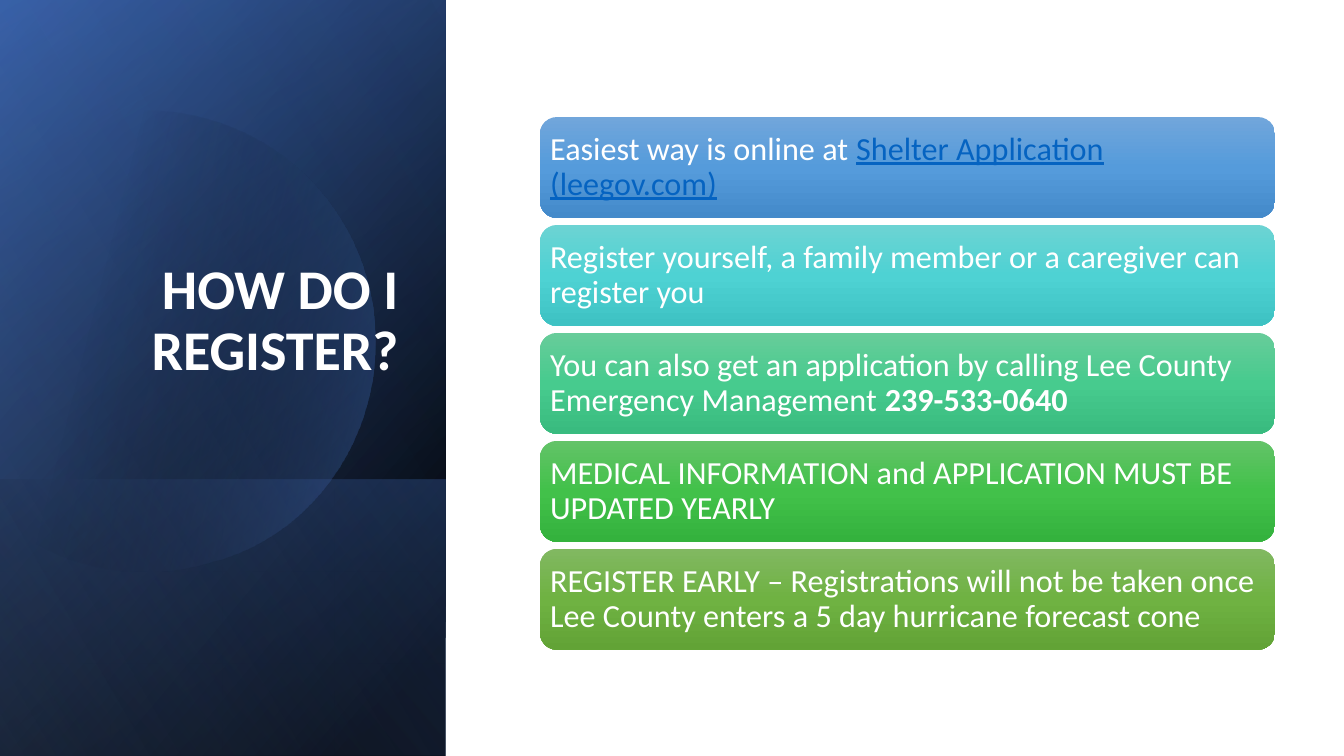
from lxml.etree import SubElement
from pptx import Presentation
from pptx.dml.color import RGBColor
from pptx.enum.shapes import MSO_SHAPE
from pptx.enum.text import MSO_ANCHOR, PP_ALIGN
from pptx.oxml.ns import qn
from pptx.util import Cm, Pt

SLIDE_W, SLIDE_H = 33.87, 19.05
PANEL_W = 11.23
BAR_LEFT, BAR_TOP, BAR_W, BAR_H, BAR_PITCH = 13.61, 2.95, 18.52, 2.54, 2.72
CURVE_STEPS = 24

COLORS = {
    "white": "FFFFFF", "black": "000000", "navy": "2F5597",
    "blue": "4472C4", "pale": "8FAADC", "link": "0563C1",
}

PANELS = [
    (SLIDE_H, [(8, "black", 100), (100, "navy", 100)], 50),
    (SLIDE_H, [(0, "black", 0), (99, "blue", 46)], 30),
    (6.96, [(2, "blue", 29), (100, "black", 30)], 130),
]
SHEEN = (SLIDE_H, [(0, "black", 0), (99, "pale", 11)], 120)

DISC_START = (3.78, 2.79)
DISC_RIGHT = [
    ((6.25, 2.84), (8.51, 4.5), (9.22, 6.99)),
    ((10.11, 10.08), (8.33, 13.41), (5.26, 14.17)),
    ((3.33, 14.73), (1.35, 14.25), (0, 13.06)),
]
DISC_EDGE = (0, 4.09)
DISC_LEFT = [
    ((0.58, 3.58), (1.27, 3.23), (2.03, 3.02)),
    ((2.62, 2.87), (3.2, 2.79), DISC_START),
]

LINK = {"color": "link", "underline": True}
BOLD = {"bold": True}
STEPS = [
    (("71A6DB", "559BDB", "448ACA"),
     [("Easiest way is online at ", {}),
      ("Shelter Application (leegov.com)", LINK)]),
    (("6CD3D3", "4ED2D3", "3EC2C3"),
     [("Register yourself, a family member or a caregiver can register you", {})]),
    (("67CC9A", "47CB8E", "39BB7F"),
     [("You can also get an application by calling Lee County "
       "Emergency Management ", {}),
      ("239-533-0640", BOLD)]),
    (("63C368", "42C14A", "34B23D"),
     [("MEDICAL INFORMATION and APPLICATION MUST BE UPDATED YEARLY", {})]),
    (("81B861", "6FB242", "62A336"),
     [("REGISTER EARLY – Registrations will not be taken once "
       "Lee County enters a 5 day hurricane forecast cone", {})]),
]


def fill_gradient(sp, stops, angle):
    sp.shadow.inherit = False
    sp.line.fill.background()
    sp.fill.gradient()
    grad = sp._element.spPr.find(qn("a:gradFill"))
    for child in list(grad):
        grad.remove(child)
    grad.set("rotWithShape", "1")
    gs_list = SubElement(grad, qn("a:gsLst"))
    for pos, color, opacity in stops:
        gs = SubElement(gs_list, qn("a:gs"), pos=str(pos * 1000))
        clr = SubElement(gs, qn("a:srgbClr"), val=COLORS.get(color, color))
        if opacity < 100:
            SubElement(clr, qn("a:alpha"), val=str(opacity * 1000))
    SubElement(grad, qn("a:lin"), ang=str(angle * 60000), scaled="0")


def add_panel(s, height, stops, angle):
    left = (PANEL_W - height) / 2
    top = SLIDE_H - (height + PANEL_W) / 2
    sp = s.shapes.add_shape(MSO_SHAPE.RECTANGLE, Cm(left), Cm(top),
                            Cm(height), Cm(PANEL_W))
    sp.rotation = 90
    sp._element.spPr.find(qn("a:xfrm")).set("flipH", "1")
    fill_gradient(sp, stops, angle)


def curve_points(start, curves):
    points = []
    for c1, c2, end in curves:
        for i in range(1, CURVE_STEPS + 1):
            t = i / CURVE_STEPS
            u = 1 - t
            points.append(tuple(
                Cm(u**3 * a + 3 * u * u * t * b + 3 * u * t * t * c + t**3 * d)
                for a, b, c, d in zip(start, c1, c2, end)))
        start = end
    return points


def add_disc(s):
    fb = s.shapes.build_freeform(*map(Cm, DISC_START))
    fb.add_line_segments(
        curve_points(DISC_START, DISC_RIGHT)
        + [tuple(map(Cm, DISC_EDGE))]
        + curve_points(DISC_EDGE, DISC_LEFT), close=True)
    fill_gradient(fb.convert_to_shape(), [(29, "black", 0), (100, "blue", 43)], 14)


def write_text(sp, runs, size, frame, align):
    tf = sp.text_frame
    for name, value in {"word_wrap": True, **frame}.items():
        setattr(tf, name, value)
    p = tf.paragraphs[0]
    p.alignment = align
    p.line_spacing = 0.9
    for text, changes in runs:
        r = p.add_run()
        r.text = text
        font = {"name": "Calibri", "size": Pt(size), "color": "white", **changes}
        r.font.color.rgb = RGBColor.from_string(COLORS[font.pop("color")])
        for name, value in font.items():
            setattr(r.font, name, value)


def add_title(s):
    sp = s.shapes.add_textbox(Cm(1.63), Cm(4.67), Cm(8.66), Cm(6.65))
    frame = {"vertical_anchor": MSO_ANCHOR.BOTTOM, "margin_bottom": Cm(1.68)}
    write_text(sp, [("HOW DO I REGISTER?", BOLD)], 40, frame, PP_ALIGN.RIGHT)


def add_step(s, index, colors, runs):
    sp = s.shapes.add_shape(MSO_SHAPE.ROUNDED_RECTANGLE, Cm(BAR_LEFT),
                            Cm(BAR_TOP + index * BAR_PITCH), Cm(BAR_W), Cm(BAR_H))
    fill_gradient(sp, [(pos, c, 100) for pos, c in zip((0, 50, 100), colors)], 90)
    frame = {"vertical_anchor": MSO_ANCHOR.MIDDLE}
    for side in ("left", "top", "right", "bottom"):
        frame[f"margin_{side}"] = Cm(0.13)
    write_text(sp, runs, 23, frame, PP_ALIGN.LEFT)


def main():
    prs = Presentation()
    prs.slide_width, prs.slide_height = Cm(SLIDE_W), Cm(SLIDE_H)
    s = prs.slides.add_slide(prs.slide_layouts[6])
    for panel in PANELS:
        add_panel(s, *panel)
    add_disc(s)
    add_panel(s, *SHEEN)
    add_title(s)
    for index, (colors, runs) in enumerate(STEPS):
        add_step(s, index, colors, runs)
    prs.save("out.pptx")


if __name__ == "__main__":
    main()
